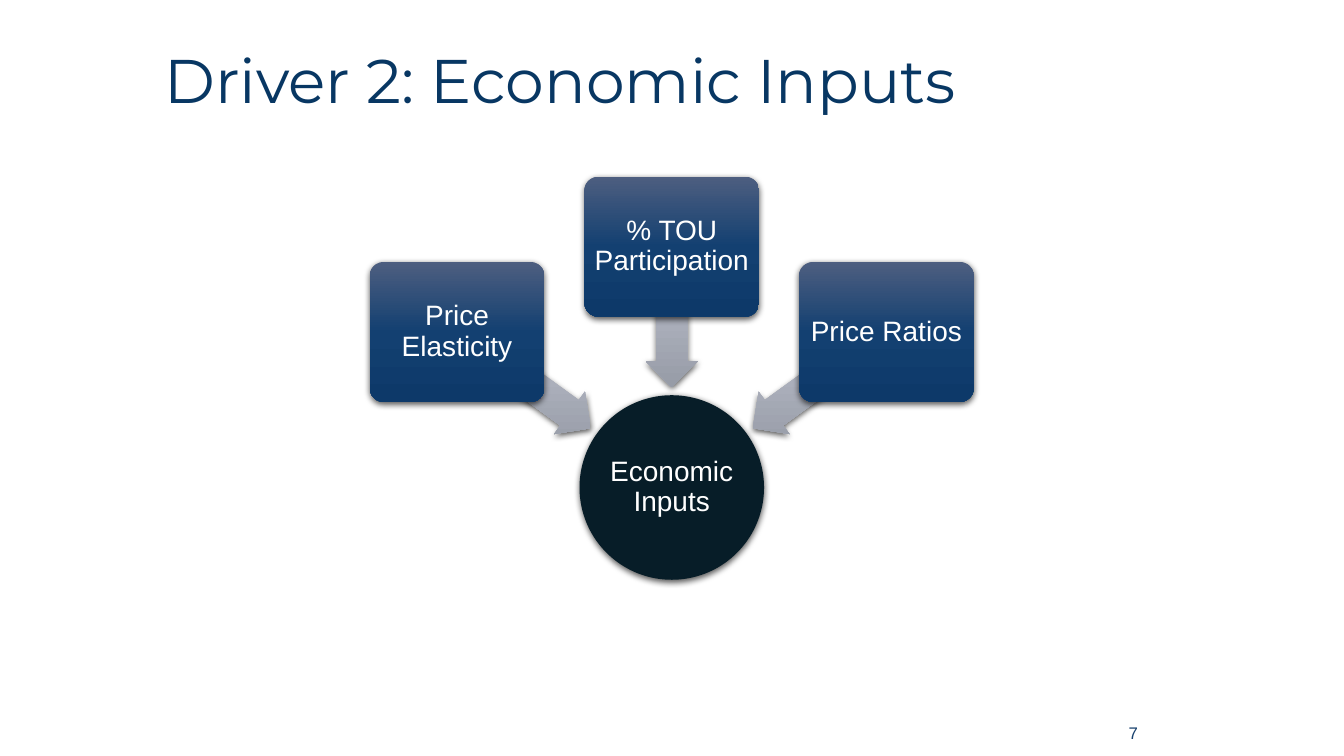
from copy import deepcopy
from dataclasses import dataclass

from lxml import etree
from pptx import Presentation
from pptx import util as u
from pptx.dml.color import RGBColor
from pptx.enum import shapes, text
from pptx.oxml.ns import qn


@dataclass(frozen=True)
class Theme:
    """Colours, fonts and type sizes of the deck."""

    title: str = "083763"
    number: str = "17406D"
    label: str = "FFFFFF"
    hub: tuple = ("071D28",)
    driver: tuple = ("4D5E80", "134071", "0D3969")
    arrow: tuple = ("B5B9C2", "ABAFBB", "979CA7")
    shadow: str = "000000"
    heading_font: str = "Montserrat"
    body_font: str = "Arial"
    title_size: int = 44
    label_size: int = 20
    number_size: int = 12


THEME = Theme()


def write_text(shape, content, *, size, color, font=THEME.body_font,
               align=text.PP_ALIGN.CENTER, spacing=0.9, inset=None):
    """Write one vertically centred, formatted paragraph into a shape."""
    frame = shape.text_frame
    frame.text = content
    frame.word_wrap = True
    frame.auto_size = text.MSO_AUTO_SIZE.NONE
    frame.vertical_anchor = text.MSO_ANCHOR.MIDDLE
    if inset is not None:
        frame.margin_left = frame.margin_right = u.Cm(inset)
        frame.margin_top = frame.margin_bottom = u.Cm(inset)
    paragraph = frame.paragraphs[0]
    paragraph.alignment = align
    paragraph.line_spacing = spacing
    paragraph.space_before = u.Pt(0)
    run_font = paragraph.runs[0].font
    run_font.name = font
    run_font.size = u.Pt(size)
    run_font.color.rgb = RGBColor.from_string(color)


def fill_shape(shape, colors):
    """Fill a shape with one colour or an even top-to-bottom gradient."""
    if len(colors) == 1:
        shape.fill.solid()
        shape.fill.fore_color.rgb = RGBColor.from_string(colors[0])
        return
    shape.fill.gradient()
    shape.fill.gradient_angle = 270
    gradient = shape._element.spPr.find(qn("a:gradFill"))
    gradient.set("rotWithShape", "0")
    stop_list = gradient.find(qn("a:gsLst"))
    stop_list.insert(1, deepcopy(stop_list[0]))
    for index, (stop, color) in enumerate(zip(shape.fill.gradient_stops, colors)):
        stop.position = index / (len(colors) - 1)
        stop.color.rgb = RGBColor.from_string(color)


def add_soft_shadow(shape):
    """Give a shape a soft shadow that falls straight down."""
    shape.shadow.inherit = False
    effects = shape._element.spPr.find(qn("a:effectLst"))
    shadow = etree.SubElement(
        effects, qn("a:outerShdw"), blurRad=str(u.Pt(4.5)),
        dist=str(u.Pt(1.5)), dir="5400000", rotWithShape="0")
    color = etree.SubElement(shadow, qn("a:srgbClr"), val=THEME.shadow)
    etree.SubElement(color, qn("a:alpha"), val="63000")


def add_block(slide, kind, box, colors, adjustments=(), rotation=0):
    """Add a filled, shadowed preset shape without an outline."""
    shape = slide.shapes.add_shape(kind, *map(u.Cm, box))
    for index, value in enumerate(adjustments):
        shape.adjustments[index] = value
    shape.rotation = rotation
    fill_shape(shape, colors)
    shape.line.fill.background()
    add_soft_shadow(shape)
    return shape


def add_title(slide, content, box):
    """Place and format the slide title."""
    title = slide.shapes.title
    title.left, title.top, title.width, title.height = map(u.Cm, box)
    write_text(title, content, size=THEME.title_size, color=THEME.title,
               font=THEME.heading_font, align=text.PP_ALIGN.LEFT)


def add_page_number(slide, content, box):
    """Place the page number at the foot of the slide."""
    number = slide.shapes.add_textbox(*map(u.Cm, box))
    write_text(number, content, size=THEME.number_size, color=THEME.number,
               align=text.PP_ALIGN.RIGHT, spacing=1.0)


def add_driver_diagram(slide, hub_label, driver_labels, box):
    """Draw three drivers pointing at a hub within the given box."""
    left, top, width, height = box
    center = left + width / 2
    diameter = 4.65
    driver_width, driver_height = 4.4, 3.53
    step = (width - driver_width) / 2
    side_drop = 2.15
    arrow_height = 1.32

    hub = add_block(
        slide, shapes.MSO_SHAPE.OVAL,
        (center - diameter / 2, top + height - diameter, diameter, diameter),
        THEME.hub)
    write_text(hub, hub_label, size=THEME.label_size, color=THEME.label, inset=0.03)

    for side, label in zip((-1, 0, 1), driver_labels):
        arrow_length = 4.12 if side else 3.56
        arrow_middle = top + (5.13 if side else 3.53)
        add_block(
            slide, shapes.MSO_SHAPE.LEFT_ARROW,
            (center + side * 3.71 - arrow_length / 2,
             arrow_middle - arrow_height / 2, arrow_length, arrow_height),
            THEME.arrow, (0.6, 0.5), 270 + side * 54)
        driver = add_block(
            slide, shapes.MSO_SHAPE.ROUNDED_RECTANGLE,
            (center + side * step - driver_width / 2,
             top + abs(side) * side_drop, driver_width, driver_height),
            THEME.driver, (0.1,))
        write_text(driver, label, size=THEME.label_size, color=THEME.label, inset=0.1)


def main():
    """Build and save the presentation."""
    presentation = Presentation()
    presentation.slide_width = u.Cm(33.87)
    presentation.slide_height = u.Cm(19.05)
    slide = presentation.slides.add_slide(presentation.slide_layouts[5])
    add_title(slide, "Driver 2: Economic Inputs", (3.89, 0.66, 27.66, 2.9))
    add_page_number(slide, "7", (23.93, 17.96, 5, 1.02))
    add_driver_diagram(
        slide, "Economic Inputs",
        ("Price Elasticity", "% TOU Participation", "Price Ratios"),
        (9.32, 4.45, 15.22, 10.16))
    presentation.save("out.pptx")


if __name__ == "__main__":
    main()
